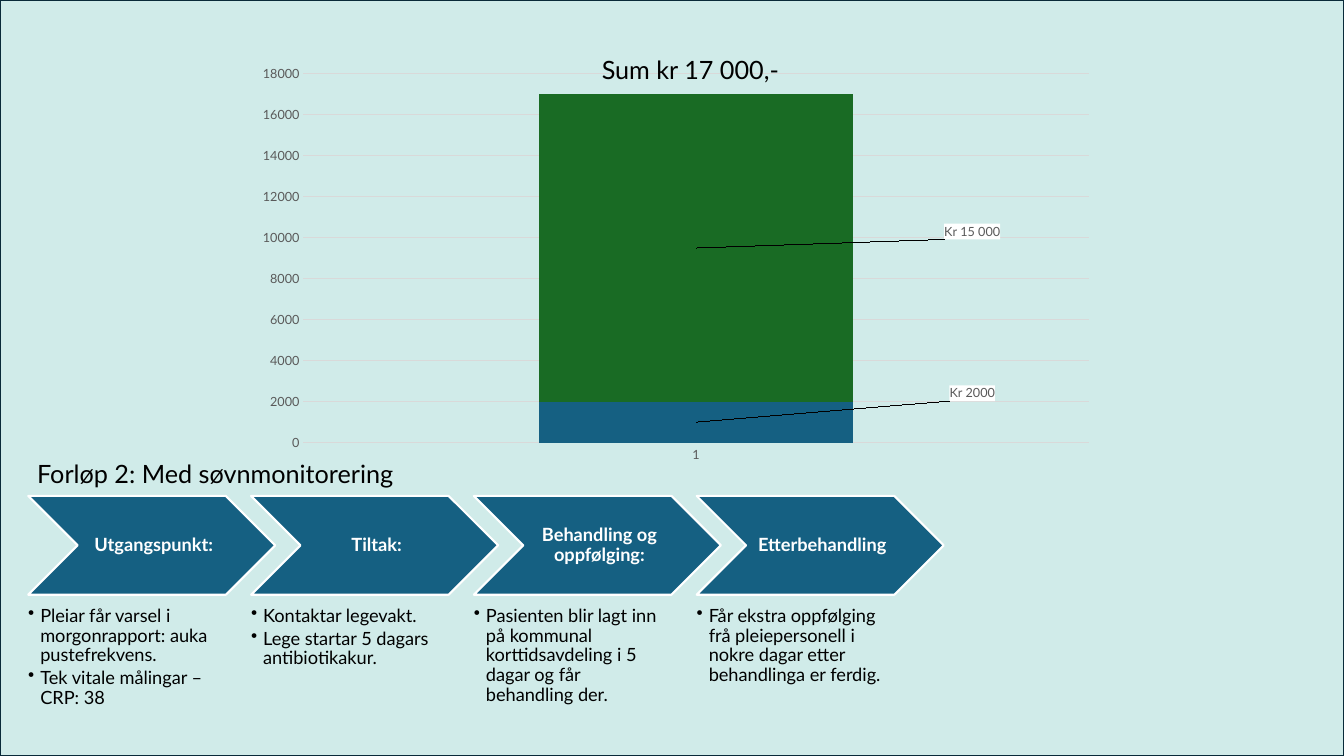
"""Build a slide with a stacked cost column above a four-step care pathway."""
from lxml import etree
from pptx import Presentation
from pptx import util as u
from pptx.chart.data import CategoryChartData
from pptx.dml.color import RGBColor
from pptx.enum import chart as charts, shapes, text
from pptx.oxml import parse_xml
from pptx.oxml.ns import nsdecls, qn

COLORS = {"backdrop": "66C0B8", "frame": "092A39", "blue": "156082", "green": "196B24",
          "white": "FFFFFF", "black": "000000", "gray": "595959", "grid": "D9D9D9"}
FONT = "Lato"
HEADINGS = [("Sum kr 17 000,-", 5.87, 0.49, 2.45), ("Forløp 2: Med søvnmonitorering", 0.27, 4.5, 3.8)]
COSTS = [("Series 1", 2000, "blue", "Kr 2000", (0.32, -0.07)),
         ("Series 2", 15000, "green", "Kr 15 000", (0.32, -0.04))]
STEPS = [
    ("Utgangspunkt:", ["Pleiar får varsel i morgonrapport: auka pustefrekvens.", "Tek vitale målingar – CRP: 38"]),
    ("Tiltak:", ["Kontaktar legevakt.", "Lege startar 5 dagars antibiotikakur."]),
    ("Behandling og oppfølging:",
     ["Pasienten blir lagt inn på kommunal korttidsavdeling i 5 dagar og får behandling der."]),
    ("Etterbehandling", ["Får ekstra oppfølging frå pleiepersonell i nokre dagar etter behandlinga er ferdig."]),
]
STEP_LEFT, STEP_PITCH = 0.28, 2.21
PLOT_AREA = {"layoutTarget": "inner", "xMode": "edge", "yMode": "edge", "x": 0.07, "y": 0.04, "w": 0.91, "h": 0.89}


def rgb(name):
    return RGBColor.from_string(COLORS[name])


def style(font, size, color, bold=False):
    font.name, font.size, font.bold = FONT, u.Pt(size), bold
    font.color.rgb = rgb(color)


def box(left, top, width, height):
    return [u.Inches(value) for value in (left, top, width, height)]


def set_margins(frame, *margins):
    frame.margin_left, frame.margin_top, frame.margin_right, frame.margin_bottom = map(u.Inches, margins)


def add_preset(slide, preset, place, fill, line):
    shape = slide.shapes.add_shape(preset, *box(*place))
    shape.shadow.inherit = False
    shape.fill.solid()
    shape.fill.fore_color.rgb = rgb(fill)
    shape.line.color.rgb = rgb(line)
    shape.line.width = u.Pt(1.5)
    return shape


def manual_layout(values):
    parts = "".join(f'<c:{key} val="{value}"/>' for key, value in values.items())
    return parse_xml(f'<c:layout {nsdecls("c")}><c:manualLayout>{parts}</c:manualLayout></c:layout>')


def add_backdrop(slide):
    backdrop = add_preset(slide, shapes.MSO_SHAPE.RECTANGLE, (0, 0, 13.33, 7.5), "backdrop", "frame")
    tint = next(backdrop.fill._xPr.iter(qn("a:srgbClr")))
    etree.SubElement(tint, qn("a:alpha"), val="30000")


def add_cost_label(series, caption, offset):
    label = series.points[0].data_label
    label.text_frame.text = caption
    style(label.text_frame.paragraphs[0].runs[0].font, 9, "gray")
    entry = next(series._element.iter(qn("c:dLbl")))
    for old in entry.findall(qn("c:layout")):
        entry.remove(old)
    entry.find(qn("c:idx")).addnext(manual_layout(dict(zip("xy", offset))))
    entry.find(qn("c:tx")).addnext(parse_xml(
        f'<c:spPr {nsdecls("c", "a")}><a:solidFill><a:srgbClr val="{COLORS["white"]}"/></a:solidFill></c:spPr>'))


def add_cost_chart(slide):
    data = CategoryChartData()
    data.categories = ["1"]
    for name, cost, *_ in COSTS:
        data.add_series(name, [cost])
    chart = slide.shapes.add_chart(charts.XL_CHART_TYPE.COLUMN_STACKED, *box(2.41, 0.57, 8.56, 4.11), data).chart
    chart.has_legend = chart.has_title = False
    style(chart.font, 10, "black")
    plot = chart.plots[0]
    plot.gap_width, plot.overlap, plot.vary_by_categories = 150, 100, False
    for series, (_, _, color, caption, offset) in zip(plot.series, COSTS):
        series.format.fill.solid()
        series.format.fill.fore_color.rgb = rgb(color)
        add_cost_label(series, caption, offset)
    for axis in (chart.category_axis, chart.value_axis):
        axis.major_tick_mark = axis.minor_tick_mark = charts.XL_TICK_MARK.NONE
        style(axis.tick_labels.font, 9, "gray")
    chart.value_axis.maximum_scale, chart.value_axis.major_unit = 18000, 2000
    chart.value_axis.minimum_scale = 0
    chart.value_axis.format.line.fill.background()
    for line in (chart.category_axis.format.line, chart.value_axis.major_gridlines.format.line):
        line.color.rgb = rgb("grid")
        line.width = u.Pt(0.75)
    plot_area = next(chart._chartSpace.iter(qn("c:plotArea")))
    for old in plot_area.findall(qn("c:layout")):
        plot_area.remove(old)
    plot_area.insert(0, manual_layout(PLOT_AREA))


def add_step(slide, left, heading, details):
    chevron = add_preset(slide, shapes.MSO_SHAPE.CHEVRON, (left, 4.92, 2.45, 0.98), "blue", "white")
    frame = chevron.text_frame
    frame.text, frame.word_wrap = heading, True
    frame.vertical_anchor = text.MSO_ANCHOR.MIDDLE
    set_margins(frame, 0.06, 0.02, 0.02, 0.02)
    title = frame.paragraphs[0]
    title.alignment, title.line_spacing = text.PP_ALIGN.CENTER, 0.9
    style(title.runs[0].font, 13, "white", True)

    frame = slide.shapes.add_textbox(*box(left, 6.02, 1.96, 1.28)).text_frame
    frame.text, frame.word_wrap = "\n".join(details), True
    set_margins(frame, 0, 0, 0, 0)
    for detail in frame.paragraphs:
        detail.line_spacing, detail.space_after = 0.9, u.Pt(2)
        properties = detail._p.get_or_add_pPr()
        properties.set("marL", str(u.Inches(0.12)))
        properties.set("indent", str(-u.Inches(0.12)))
        etree.SubElement(properties, qn("a:buChar"), char="•")
        style(detail.runs[0].font, 13, "black")


def add_heading(slide, heading, left, top, width):
    frame = slide.shapes.add_textbox(*box(left, top, width, 0.4)).text_frame
    frame.text, frame.word_wrap = heading, True
    frame.auto_size = text.MSO_AUTO_SIZE.SHAPE_TO_FIT_TEXT
    style(frame.paragraphs[0].runs[0].font, 18, "black")


def main():
    deck = Presentation()
    deck.slide_width, deck.slide_height = u.Inches(13.33), u.Inches(7.5)
    slide = deck.slides.add_slide(deck.slide_layouts[6])
    add_backdrop(slide)
    for index, (heading, details) in enumerate(STEPS):
        add_step(slide, STEP_LEFT + index * STEP_PITCH, heading, details)
    add_cost_chart(slide)
    for heading in HEADINGS:
        add_heading(slide, *heading)
    deck.save("out.pptx")


if __name__ == "__main__":
    main()
